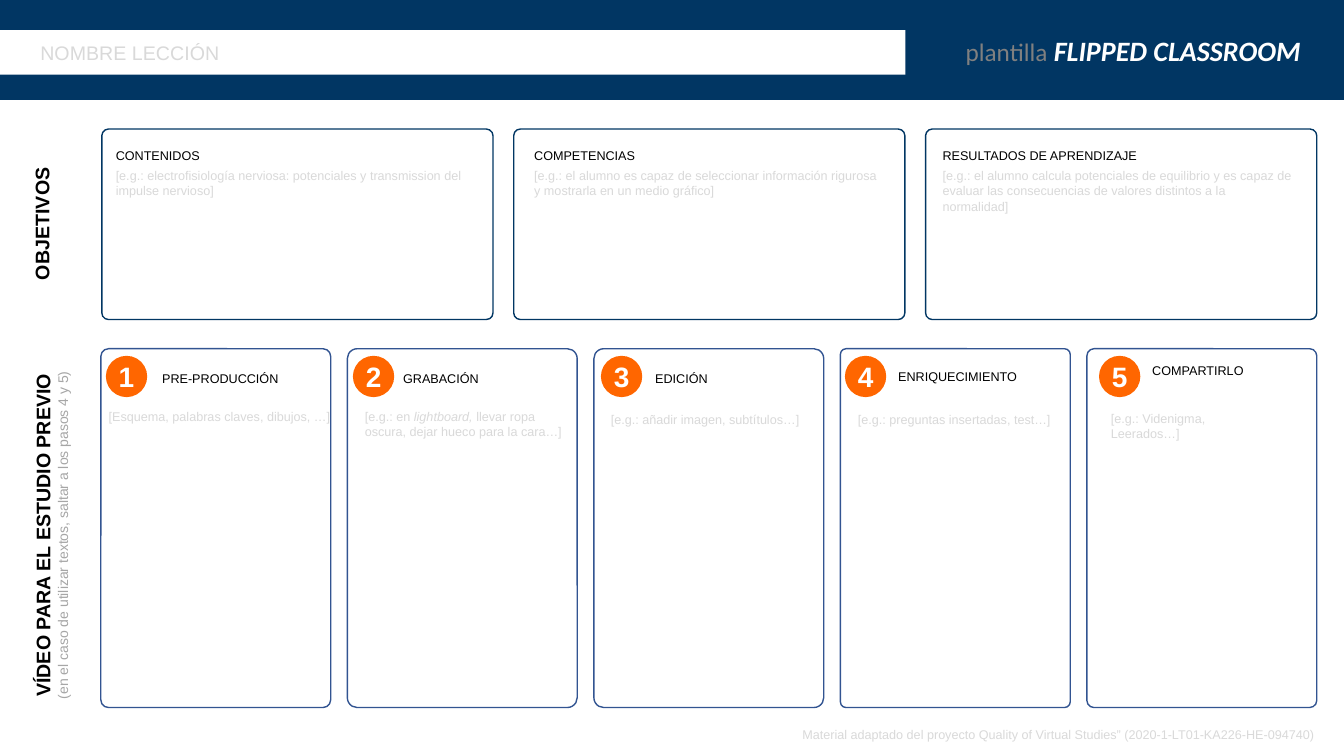
from dataclasses import dataclass

from pptx import Presentation
from pptx.dml.color import RGBColor
from pptx.enum import shapes, text
from pptx.util import Inches, Pt


@dataclass(frozen=True)
class Theme:
    navy: str = "013663"
    blue: str = "325491"
    orange: str = "FF6600"
    white: str = "FFFFFF"
    black: str = "000000"
    hint: str = "D9D9D9"
    note: str = "A6A6A6"
    grey: str = "808080"
    small: int = 9
    caption: int = 10
    heading: int = 14
    brand: int = 18
    number: int = 20
    font: str = "Arial"
    brand_font: str = "Calibri"


theme = Theme()
LEFT, CENTER, RIGHT = text.PP_ALIGN.LEFT, text.PP_ALIGN.CENTER, text.PP_ALIGN.RIGHT


def add_box(kind, left, top, width, height, fill=None, line=None, radius=None):
    shape = slide.shapes.add_shape(
        kind, Inches(left), Inches(top), Inches(width), Inches(height))
    shape.shadow.inherit = False
    if radius is not None:
        shape.adjustments[0] = radius
    if fill:
        shape.fill.solid()
        shape.fill.fore_color.rgb = RGBColor.from_string(fill)
    else:
        shape.fill.background()
    if line:
        shape.line.color.rgb = RGBColor.from_string(line)
        shape.line.width = Pt(1)
    else:
        shape.line.fill.background()
    return shape


def add_text(place, paragraphs, align=LEFT, shape=None, font=theme.font):
    """Write paragraphs of (text, size, colour, style) runs; style holds "b" and "i"."""
    left, top, width, height = (Inches(value) for value in place)
    if shape is None:
        shape = slide.shapes.add_textbox(left, top, width, height)
    else:
        shape.left, shape.top, shape.width, shape.height = left, top, width, height
    frame = shape.text_frame
    frame.word_wrap = True
    frame.auto_size = text.MSO_AUTO_SIZE.SHAPE_TO_FIT_TEXT
    frame.vertical_anchor = text.MSO_ANCHOR.TOP
    for index, runs in enumerate(paragraphs):
        paragraph = frame.add_paragraph() if index else frame.paragraphs[0]
        paragraph.alignment = align
        for words, size, colour, style in runs:
            run = paragraph.add_run()
            run.text = words
            run.font.name = font
            run.font.size = Pt(size)
            run.font.color.rgb = RGBColor.from_string(colour)
            run.font.bold = "b" in style
            run.font.italic = "i" in style
    return shape


presentation = Presentation()
presentation.slide_width = Inches(13.33)
presentation.slide_height = Inches(7.5)
slide = presentation.slides.add_slide(presentation.slide_layouts[5])
rectangle = shapes.MSO_SHAPE.RECTANGLE
rounded = shapes.MSO_SHAPE.ROUNDED_RECTANGLE

# Header
add_box(rectangle, 0, 0, 13.33, 0.99, theme.navy, theme.navy)
add_box(rectangle, -0.01, 0.3, 8.99, 0.44, theme.white)
title = add_text((0.3, 0.36, 3.66, 0.34),
                 [[("NOMBRE LECCIÓN", theme.heading, theme.hint, "")]],
                 shape=slide.shapes.title)
title.element.getparent().append(title.element)  # bring in front of the band
add_text((8.42, 0.28, 4.58, 0.44),
         [[("plantilla", theme.brand, theme.grey, ""),
           (" ", theme.number, theme.white, "b"),
           ("FLIPPED CLASSROOM", theme.number, theme.white, "bi")]],
         RIGHT, font=theme.brand_font)

# Row labels, turned to read upwards
row_labels = [
    ((-0.54, 2.05, 1.91, 0.34),
     [[("OBJETIVOS", theme.heading, theme.black, "b")]]),
    ((-1.22, 4.94, 3.69, 0.74),
     [[("VÍDEO PARA EL ESTUDIO PREVIO", theme.heading, theme.black, "b")],
      [("(en el caso de utilizar textos, saltar a los pasos 4 y 5)",
        theme.caption, theme.note, "")]]),
]
for place, paragraphs in row_labels:
    add_text(place, paragraphs, CENTER).rotation = 270

# Objectives: text left, heading, hint
objectives = [
    (1.05, "CONTENIDOS",
     "[e.g.: electrofisiología nerviosa: potenciales y transmission del impulse nervioso]"),
    (5.2, "COMPETENCIAS",
     "[e.g.: el alumno es capaz de seleccionar información rigurosa "
     "y mostrarla en un medio gráfico]"),
    (9.25, "RESULTADOS DE APRENDIZAJE",
     "[e.g.: el alumno calcula potenciales de equilibrio y es capaz de evaluar "
     "las consecuencias de valores distintos a la normalidad]"),
]
for column, (left, heading, hint) in enumerate(objectives):
    add_box(rounded, 1.01 + 4.085 * column, 1.28, 3.88, 1.89,
            line=theme.navy, radius=0.035)
    box = add_text((left, 1.42, 3.66, 0.61),
                   [[(heading, theme.small, theme.black, "")],
                    [(hint, theme.small, theme.hint, "")]])
    box.text_frame.paragraphs[1].space_before = Pt(3.5)

# Video steps: corner radius, circle left, heading place, hint place, hint runs
steps = [
    (0.034, 1.05, "PRE-PRODUCCIÓN", (1.51, 3.63, 1.84, 0.25), (0.98, 4.01, 2.42, 0.25),
     [("[Esquema, palabras claves, dibujos, …]", "")]),
    (0.043, 3.5, "GRABACIÓN", (3.9, 3.63, 1.77, 0.25), (3.52, 4.01, 2.19, 0.4),
     [("[e.g.: en ", ""), ("lightboard, ", "i"),
      ("llevar ropa oscura, dejar hueco para la cara…]", "")]),
    (0.043, 5.96, "EDICIÓN", (6.4, 3.63, 1.7, 0.25), (5.96, 4.04, 2.14, 0.25),
     [("[e.g.: añadir imagen, subtítulos…]", "")]),
    (0.025, 8.38, "ENRIQUECIMIENTO", (8.81, 3.61, 1.77, 0.25), (8.41, 4.04, 2.14, 0.25),
     [("[e.g.: preguntas insertadas, test…]", "")]),
    (0.031, 10.9, "COMPARTIRLO", (11.33, 3.55, 1.8, 0.25), (10.92, 4.03, 1.8, 0.25),
     [("[e.g.: Videnigma, Leerados…]", "")]),
]
for column, (radius, circle_left, heading, heading_place, hint_place, hint) in enumerate(steps):
    add_box(rounded, 1 + 2.445 * column, 3.46, 2.28, 3.56,
            line=theme.blue, radius=radius)
    circle = add_box(shapes.MSO_SHAPE.OVAL, circle_left, 3.53, 0.41, 0.41, theme.orange)
    frame = circle.text_frame
    frame.margin_left = frame.margin_right = frame.margin_top = frame.margin_bottom = 0
    frame.word_wrap = False
    frame.vertical_anchor = text.MSO_ANCHOR.MIDDLE
    frame.text = str(column + 1)
    frame.paragraphs[0].alignment = CENTER
    font = frame.paragraphs[0].runs[0].font
    font.name, font.size, font.bold = theme.font, Pt(theme.number), True
    font.color.rgb = RGBColor.from_string(theme.white)
    add_text(heading_place, [[(heading, theme.small, theme.black, "")]])
    add_text(hint_place,
             [[(words, theme.small, theme.hint, style) for words, style in hint]])

# Source note
add_text((7.74, 7.16, 5.39, 0.25),
         [[("Material adaptado del proyecto Quality of Virtual Studies” "
            "(2020-1-LT01-KA226-HE-094740)", theme.small, theme.hint, "")]], RIGHT)

presentation.save("out.pptx")
